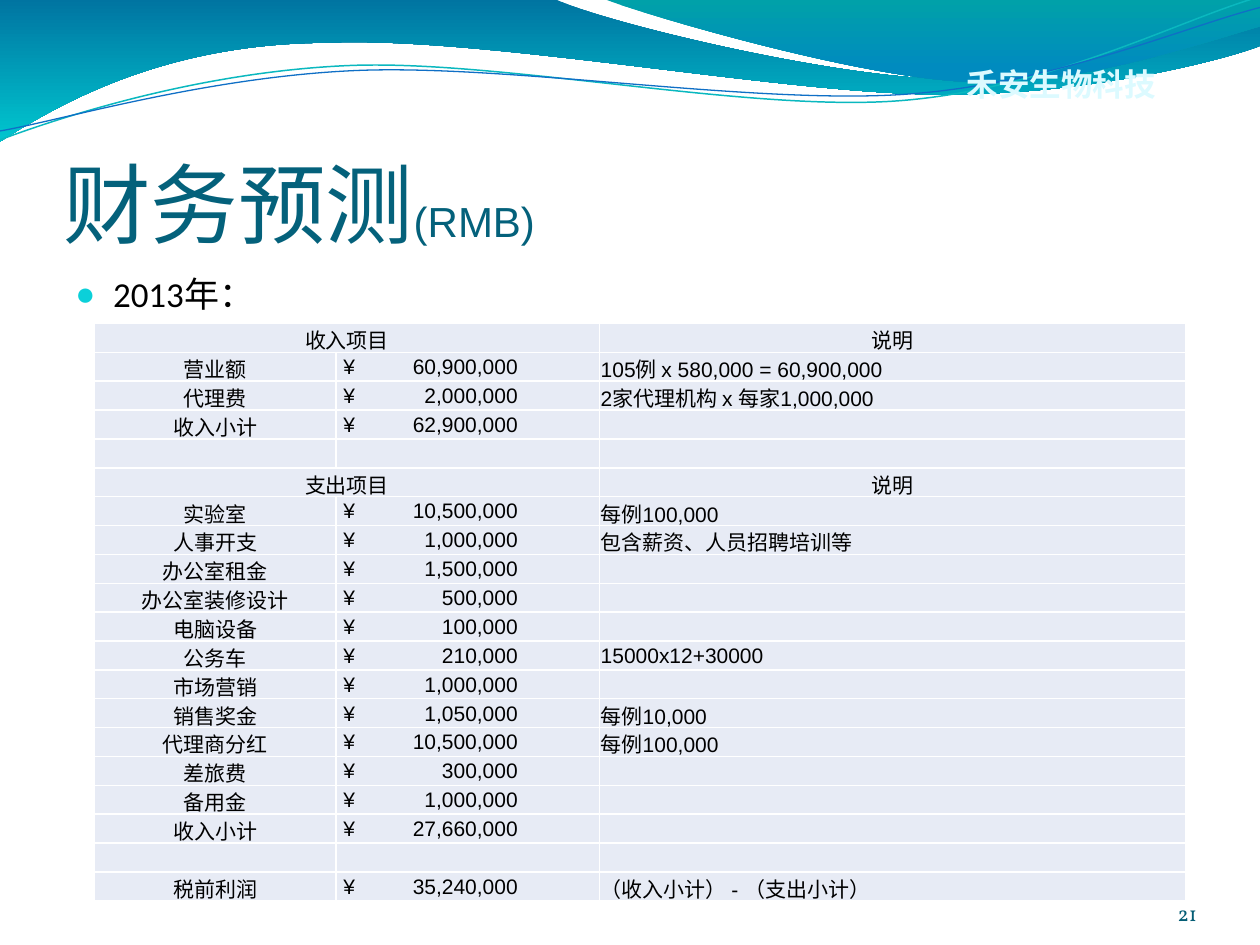
"""Build the 2013 financial forecast slide with its wave banner and budget table."""
from math import cos, radians, sin
from lxml.etree import SubElement
from pptx import Presentation
from pptx.dml.color import RGBColor
from pptx.enum.text import MSO_ANCHOR as Anchor, PP_ALIGN as Align
from pptx.oxml import parse_xml
from pptx.oxml.ns import nsdecls, qn
from pptx.util import Cm, Pt


def color(value):
    return RGBColor.from_string(value)


def add_text(left, top, width, height, text, size, font, tint, anchor=Anchor.TOP, align=Align.LEFT):
    box = slide.shapes.add_textbox(Cm(left), Cm(top), Cm(width), Cm(height))
    frame = box.text_frame
    frame.word_wrap = True
    frame.vertical_anchor = anchor
    frame.text = text
    paragraph = frame.paragraphs[0]
    paragraph.alignment = align
    run = paragraph.runs[0]
    run.font.size = Pt(size)
    run.font.name = font
    run.font.color.rgb = color(tint)
    return frame


presentation = Presentation()
presentation.slide_width = Cm(25.4)
presentation.slide_height = Cm(19.05)
slide = presentation.slides.add_slide(presentation.slide_layouts[6])

INCH = 2.54
TILT = 2.7
waves = [
    {"pieces": [("L", [(4.4, -0.01)]),
                ("C", [(4.76, 0.17), (6.64, 0.63), (7.58, 0.63)]),
                ("C", [(8.53, 0.63), (9.58, 0.26), (10, 0.09)]),
                ("L", [(10.01, 0.36)]),
                ("C", [(9.83, 0.44), (8.7, 0.76), (7.46, 0.75)]),
                ("C", [(6.22, 0.75), (3.82, 0.28), (2.57, 0.34)]),
                ("C", [(1.29, 0.35), (0.46, 0.83), (-0.01, 1.13)])],
     "start": (0, -0.01), "stops": [(0, "0074A1", 45), (1, "00C6CF", 55)]},
    {"pieces": [("C", [(5.09, 0.11), (6.82, 0.62), (7.69, 0.65)]),
                ("C", [(8.56, 0.69), (9.61, 0.32), (10, 0.21)]),
                ("L", [(10, 0)])],
     "start": (4.79, -0.01), "stops": [(0, "00A1A9", 30), (0.8, "008BBF", 45)]},
    {"pieces": [("C", [(0.48, 0.93), (1.58, 0.57), (2.77, 0.52)]),
                ("C", [(3.95, 0.47), (5.93, 0.89), (7.13, 0.8)]),
                ("C", [(8.33, 0.71), (9.38, 0.15), (9.98, -0.02)])],
     "start": (0, 1.11), "center": (4.99, 0.58), "line": ("0AB8BF", 0.85)},
    {"pieces": [("C", [(0.47, 0.96), (1.64, 0.61), (2.83, 0.56)]),
                ("C", [(4.03, 0.51), (5.97, 0.83), (7.17, 0.75)]),
                ("C", [(8.36, 0.67), (9.41, 0.21), (10, 0.06)])],
     "start": (0, 1.04), "center": (5, 0.59), "line": ("0F6FC6", 0.75)},
]
for wave in waves:
    points = [wave["start"]] + [point for _, piece in wave["pieces"] for point in piece]
    if "center" in wave:
        center_x, center_y = wave["center"]
        cosine, sine = cos(radians(TILT)), sin(radians(TILT))
        points = [(center_x + (x - center_x) * cosine - (y - center_y) * sine,
                   center_y + (x - center_x) * sine + (y - center_y) * cosine) for x, y in points]
    vertices = [(Cm(x * INCH), Cm(y * INCH)) for x, y in points]
    builder = slide.shapes.build_freeform(*vertices[0])
    builder.add_line_segments(vertices[1:], close="stops" in wave)
    shape = builder.convert_to_shape()
    shape.shadow.inherit = False
    segments = iter(list(shape.element.spPr.iter(qn("a:lnTo"))))
    for kind, piece in wave["pieces"]:
        corners = [next(segments) for _ in piece]
        if kind == "C":
            corners[0].tag = qn("a:cubicBezTo")
            for corner in corners[1:]:
                corners[0].append(corner[0])
                corner.getparent().remove(corner)
    if "stops" in wave:
        shape.line.fill.background()
        shape.fill.gradient()
        shape.fill.gradient_angle = 270
        tints = shape.element.spPr.find(qn("a:gradFill")).iter(qn("a:srgbClr"))
        for stop, (position, tint, _) in zip(shape.fill.gradient_stops, wave["stops"]):
            stop.position = position
            stop.color.rgb = color(tint)
        for tint, (_, _, opacity) in zip(tints, wave["stops"]):
            SubElement(tint, qn("a:alpha"), val=str(opacity * 1000))
    else:
        tint, width = wave["line"]
        shape.rotation = -TILT
        shape.fill.background()
        shape.line.color.rgb = color(tint)
        shape.line.width = Pt(width)

title = add_text(1.28, 1.96, 22.86, 3.18, "财务预测", 50, "Calibri", "04617B", Anchor.BOTTOM)
title.margin_left = title.margin_right = title.margin_bottom = 0
unit = title.paragraphs[0].add_run()
unit.text = "(RMB)"
unit.font.size = Pt(24)
unit.font.name = "Arial"
unit.font.color.rgb = color("04617B")

body = add_text(1.27, 5.37, 22.86, 12.19, "2013年：", 20, "Calibri", "000000")
body.paragraphs[0].space_before = Pt(4)
properties = body.paragraphs[0]._p.get_or_add_pPr()
properties.set("marL", str(Cm(0.76)))
properties.set("indent", str(Cm(-0.76)))
SubElement(SubElement(properties, qn("a:buClr")), qn("a:srgbClr"), val="0BD0D9")
SubElement(properties, qn("a:buSzPct"), val="95000")
SubElement(properties, qn("a:buFont"), typeface="Arial")
SubElement(properties, qn("a:buChar"), char="●")

number = add_text(22.02, 17.65, 2.11, 1.02, "21", 12, "Vollkorn", "045D75", Anchor.BOTTOM, Align.RIGHT)
number.margin_left = number.margin_right = number.margin_top = number.margin_bottom = 0

company = add_text(17.7, 1.19, 7.39, 1.02, "禾安生物科技", 18, "Noto Sans CJK SC", "DCFAFF", align=Align.CENTER)
company_run = company.paragraphs[0].runs[0]
company_run.font.bold = True
SubElement(company_run._r.get_or_add_rPr(), qn("a:ea"), typeface="Noto Sans CJK SC")

rows = [
    ("收入项目", "", "说明"),
    ("营业额", "60,900,000", "105例 x 580,000 = 60,900,000"),
    ("代理费", "2,000,000", "2家代理机构 x 每家1,000,000"),
    ("收入小计", "62,900,000", ""),
    ("", "", ""),
    ("支出项目", "", "说明"),
    ("实验室", "10,500,000", "每例100,000"),
    ("人事开支", "1,000,000", "包含薪资、人员招聘培训等"),
    ("办公室租金", "1,500,000", ""),
    ("办公室装修设计", "500,000", ""),
    ("电脑设备", "100,000", ""),
    ("公务车", "210,000", "15000x12+30000"),
    ("市场营销", "1,000,000", ""),
    ("销售奖金", "1,050,000", "每例10,000"),
    ("代理商分红", "10,500,000", "每例100,000"),
    ("差旅费", "300,000", ""),
    ("备用金", "1,000,000", ""),
    ("收入小计", "27,660,000", ""),
    ("", "", ""),
    ("税前利润", "35,240,000", "（收入小计） - （支出小计）"),
]
TABLE_HEIGHT = 11.64
table = slide.shapes.add_table(len(rows), 3, Cm(1.9), Cm(6.52), Cm(22), Cm(TABLE_HEIGHT)).table
table.first_row = table.horz_banding = False
for column, width in zip(table.columns, (4.87, 5.32, 11.81)):
    column.width = Cm(width)
for row_index, row in enumerate(rows):
    table.rows[row_index].height = Cm(TABLE_HEIGHT / len(rows))
    is_header = row[2] == "说明"
    for column_index, text in enumerate(row):
        cell = table.cell(row_index, column_index)
        is_amount = column_index == 1 and text
        cell.text_frame.text = f"¥\t{text}" if is_amount else text
        cell.vertical_anchor = Anchor.MIDDLE
        cell.margin_left = Cm(0.15 if is_amount else 0.02)
        cell.margin_right = cell.margin_top = Cm(0.02)
        cell.margin_bottom = 0
        cell.fill.solid()
        cell.fill.fore_color.rgb = color("E7EBF5")
        paragraph = cell.text_frame.paragraphs[0]
        paragraph.alignment = Align.CENTER if column_index == 0 or is_header else Align.LEFT
        if is_amount:
            tabs = SubElement(paragraph._p.get_or_add_pPr(), qn("a:tabLst"))
            SubElement(tabs, qn("a:tab"), pos=str(Cm(3.52)), algn="r")
        for run in paragraph.runs:
            run.font.size = Pt(12)
            run.font.name = "Arial"
            run.font.color.rgb = color("000000")
        if not text:
            SubElement(paragraph._p, qn("a:endParaRPr"), sz="1200")
        for position, side in enumerate(("lnL", "lnR", "lnT", "lnB")):
            border = parse_xml(f'<a:{side} {nsdecls("a")} w="12700"><a:solidFill>'
                               f'<a:srgbClr val="FFFFFF"/></a:solidFill></a:{side}>')
            cell._tc.get_or_add_tcPr().insert(position, border)
    if is_header:
        table.cell(row_index, 0).merge(table.cell(row_index, 1))

presentation.save("out.pptx")
